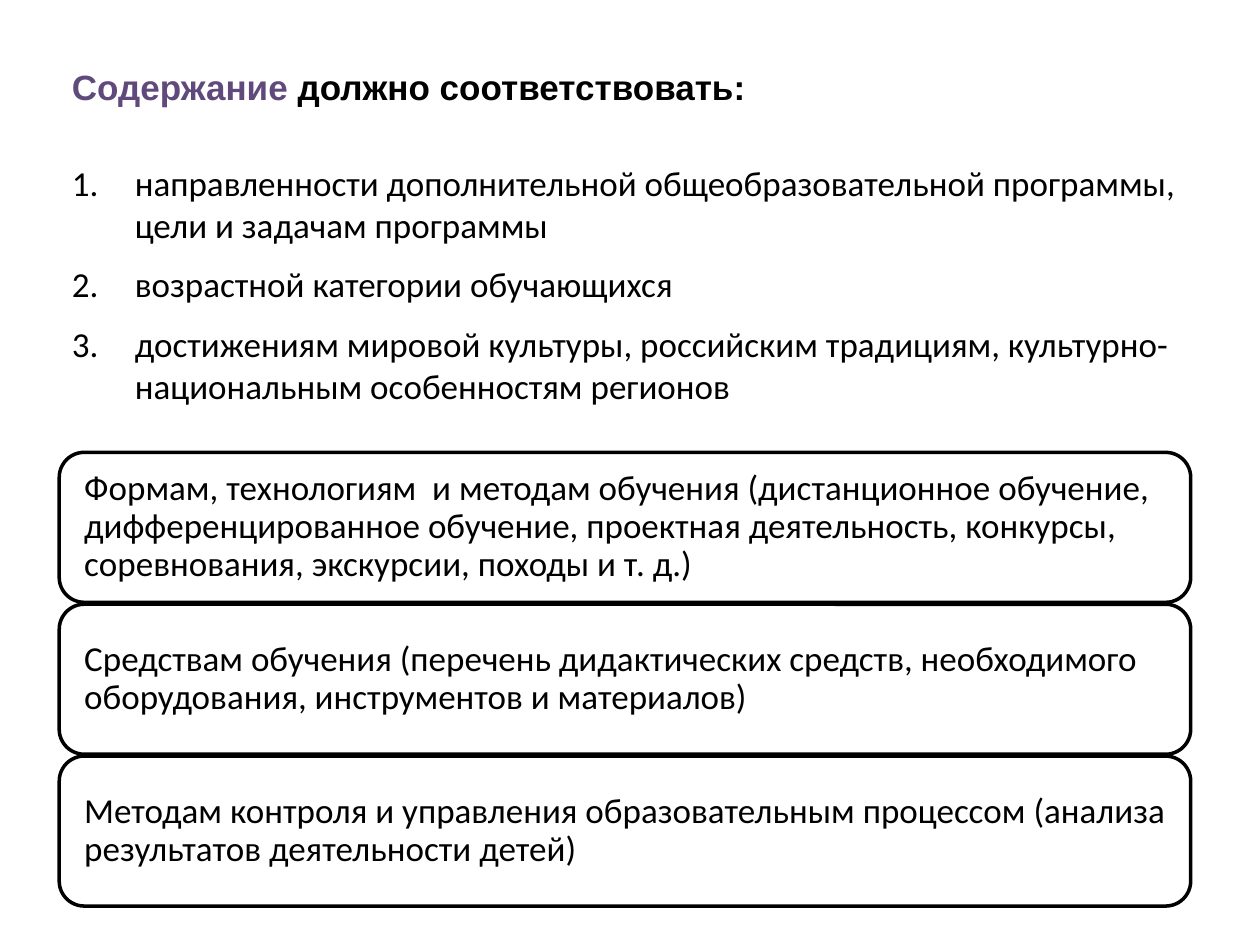
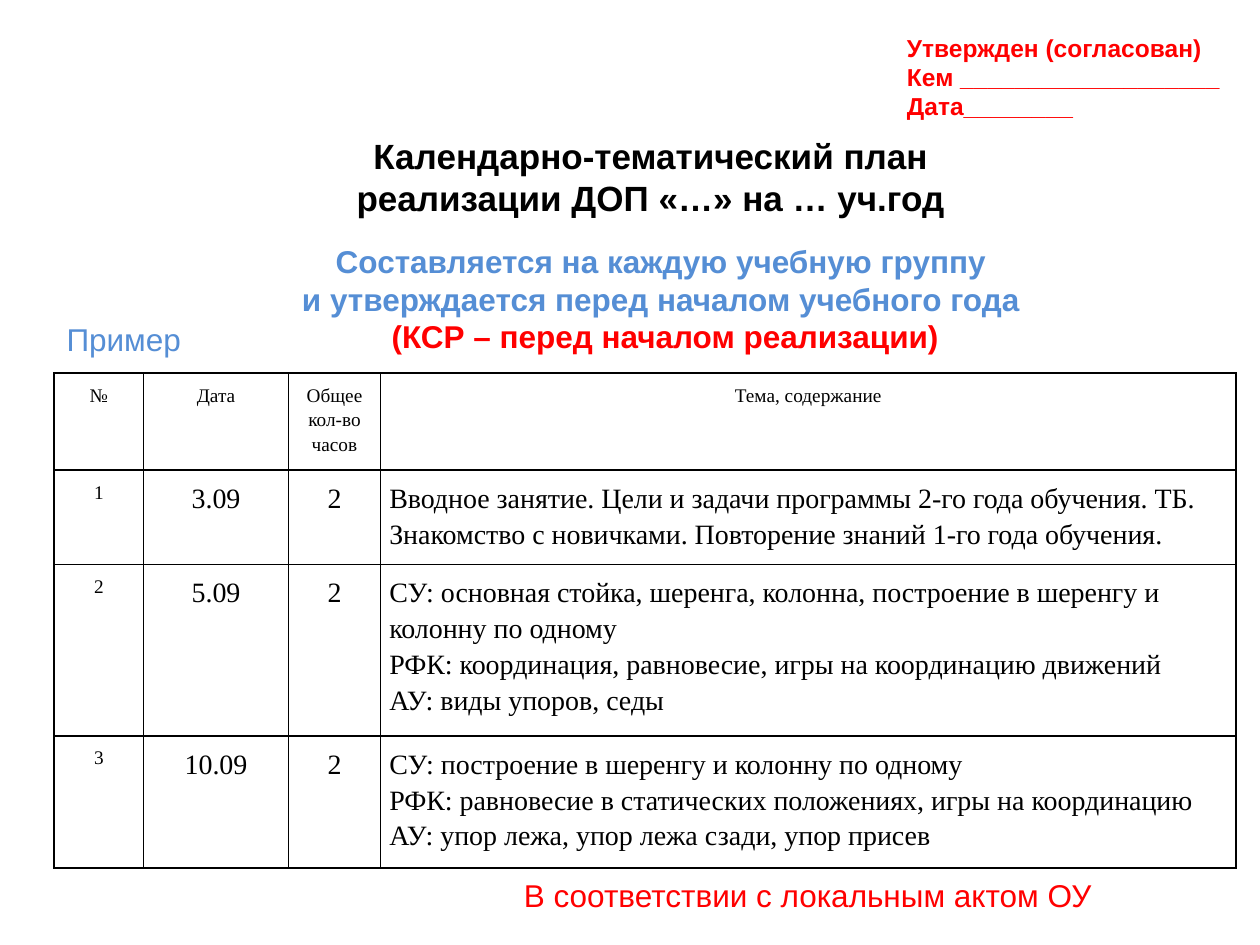
from dataclasses import dataclass

from lxml import etree
from pptx import Presentation
from pptx.dml.color import RGBColor
from pptx.enum.shapes import MSO_SHAPE
from pptx.enum.text import MSO_ANCHOR, MSO_AUTO_SIZE, PP_ALIGN
from pptx.oxml.ns import qn
from pptx.util import Emu, Inches, Pt

LEFT, CENTER = PP_ALIGN.LEFT, PP_ALIGN.CENTER
TOP, MIDDLE = MSO_ANCHOR.TOP, MSO_ANCHOR.MIDDLE
ROUNDED = MSO_SHAPE.ROUNDED_RECTANGLE
NO_AUTOFIT = MSO_AUTO_SIZE.NONE
TITLE_AND_BODY, TITLE_ONLY = 1, 5
WIDTH, HEIGHT = Inches(10), Inches(7.5)


@dataclass(frozen=True)
class Theme:
    black: str = "000000"
    white: str = "FFFFFF"
    purple: str = "604A7B"
    blue: str = "558ED5"
    red: str = "FF0000"
    head_font: str = "Arial"
    body_font: str = "Calibri"
    table_font: str = "Times New Roman"
    title: int = 20
    body: int = 20
    label: int = 18
    stamp: int = 14
    cell: int = 16
    small_cell: int = 11


T = Theme()

REQUIREMENTS = [
    "направленности дополнительной общеобразовательной программы, цели и задачам программы",
    "возрастной категории обучающихся",
    "достижениям мировой культуры, российским традициям, культурно-национальным "
    "особенностям регионов",
]
CARDS = [
    "Формам, технологиям  и методам обучения (дистанционное обучение, дифференцированное "
    "обучение, проектная деятельность, конкурсы, соревнования, экскурсии, походы и т. д.)",
    "Средствам обучения (перечень дидактических средств, необходимого оборудования, "
    "инструментов и материалов)",
    "Методам контроля и управления образовательным процессом (анализа результатов "
    "деятельности детей)",
]
PLAN_COLUMNS = [7.1, 11.5, 7.3, 67.9]
PLAN_ROWS = [10.27, 10, 18.13, 14]
PLAN = [
    ["№", "Дата", "Общее кол-во\nчасов", "Тема, содержание"],
    ["1", "3.09", "2",
     "Вводное занятие. Цели и задачи программы 2-го года обучения. ТБ. "
     "Знакомство с новичками. Повторение знаний 1-го года обучения."],
    ["2", "5.09", "2",
     "СУ: основная стойка, шеренга, колонна, построение в шеренгу и колонну по одному\n"
     "РФК: координация, равновесие, игры на координацию движений\n"
     "АУ: виды упоров, седы"],
    ["3", "10.09", "2",
     "СУ: построение в шеренгу и колонну по одному\n"
     "РФК: равновесие в статических положениях, игры на координацию\n"
     "АУ: упор лежа, упор лежа сзади, упор присев"],
]


def across(percent):
    return Emu(round(WIDTH * percent / 100))


def down(percent):
    return Emu(round(HEIGHT * percent / 100))


def box(x, y, w, h):
    """Turn percentages of the slide into left, top, width and height."""
    return across(x), down(y), across(w), down(h)


def rgb(color):
    return RGBColor.from_string(color)


def write(tf, paragraphs, size, font=T.head_font, color=T.black, bold=False,
          align=LEFT, anchor=TOP, spacing=1.0):
    """Write paragraphs, each a string or a list of (text, colour) runs."""
    tf.word_wrap = True
    tf.auto_size = NO_AUTOFIT
    tf.vertical_anchor = anchor
    for i, content in enumerate(paragraphs):
        p = tf.paragraphs[0] if i == 0 else tf.add_paragraph()
        p.alignment, p.line_spacing = align, spacing
        p.space_before = p.space_after = Pt(0)
        p.font.name, p.font.size, p.font.bold = font, Pt(size), bold
        p.font.color.rgb = rgb(color)
        if isinstance(content, str):
            p.text = content
        else:
            for text, run_color in content:
                r = p.add_run()
                r.text = text
                r.font.color.rgb = rgb(run_color)


def add_title(s, place, paragraphs, align=LEFT):
    sp = s.shapes.title
    sp.left, sp.top, sp.width, sp.height = place
    write(sp.text_frame, paragraphs, T.title, bold=True, align=align)


def add_label(s, place, paragraphs, size, **style):
    sp = s.shapes.add_textbox(*place)
    write(sp.text_frame, paragraphs, size, **style)


def add_numbered_list(s, place, items):
    sp = s.placeholders[1]
    sp.left, sp.top, sp.width, sp.height = place
    write(sp.text_frame, items, T.body, font=T.body_font)
    for p in sp.text_frame.paragraphs:
        p.space_after = Pt(10)
        pPr = p._p.get_or_add_pPr()
        pPr.set("marL", str(Inches(0.5)))
        pPr.set("indent", str(-Inches(0.5)))
        number = pPr.makeelement(qn("a:buAutoNum"), {"type": "arabicPeriod"})
        pPr.find(qn("a:defRPr")).addprevious(number)


def add_card(s, place, text):
    sp = s.shapes.add_shape(ROUNDED, *place)
    sp.shadow.inherit = False
    sp.fill.solid()
    sp.fill.fore_color.rgb = rgb(T.white)
    sp.line.color.rgb = rgb(T.black)
    sp.line.width = Pt(2)
    tf = sp.text_frame
    tf.margin_left = tf.margin_right = Inches(0.14)
    write(tf, [text], T.body, font=T.body_font, anchor=MIDDLE, spacing=0.9)


def format_cell(cell):
    cell.margin_left = cell.margin_right = Inches(0.07)
    cell.margin_top = cell.margin_bottom = Inches(0.07)
    tcPr = cell._tc.get_or_add_tcPr()
    for side in ("lnL", "lnR", "lnT", "lnB"):
        ln = etree.SubElement(tcPr, qn(f"a:{side}"), w=str(Pt(1)))
        fill = etree.SubElement(ln, qn("a:solidFill"))
        etree.SubElement(fill, qn("a:srgbClr"), val=T.black)
    cell.fill.solid()
    cell.fill.fore_color.rgb = rgb(T.white)


def add_plan_table(s, x, y):
    place = box(x, y, sum(PLAN_COLUMNS), sum(PLAN_ROWS))
    table = s.shapes.add_table(len(PLAN), len(PLAN_COLUMNS), *place).table
    table.first_row = table.horz_banding = False
    for column, width in zip(table.columns, PLAN_COLUMNS):
        column.width = across(width)
    for row, height in zip(table.rows, PLAN_ROWS):
        row.height = down(height)
    for i, texts in enumerate(PLAN):
        for j, text in enumerate(texts):
            cell = table.cell(i, j)
            format_cell(cell)
            is_topic = i > 0 and j == len(texts) - 1
            size = T.small_cell if i == 0 or j == 0 else T.cell
            write(cell.text_frame, text.split("\n"), size, font=T.table_font,
                  align=LEFT if is_topic else CENTER, spacing=1.15)


def build_content_slide(prs):
    s = prs.slides.add_slide(prs.slide_layouts[TITLE_AND_BODY])
    add_title(s, box(4.7, 6.27, 70.3, 5.87),
              [[("Содержание", T.purple), (" должно соответствовать:", T.black)]])
    add_numbered_list(s, box(4.7, 16.4, 90.6, 27.33), REQUIREMENTS)
    top, height, gap = 47.87, 15.87, 0.2
    for i, text in enumerate(CARDS):
        add_card(s, box(4.7, top + i * (height + gap), 89.8, height), text)


def build_plan_slide(prs):
    s = prs.slides.add_slide(prs.slide_layouts[TITLE_ONLY])
    add_label(s, box(71, 2.8, 29, 10.8),
              ["Утвержден (согласован)", "Кем ___________________", "Дата________"],
              T.stamp, color=T.red, bold=True)
    add_title(s, box(5.6, 13.6, 92.1, 10.27),
              ["Календарно-тематический план", "реализации ДОП «…» на … уч.год"], CENTER)
    add_label(s, box(5.6, 24.93, 94.4, 13.47),
              ["Составляется на каждую учебную группу \v"
               "и утверждается перед началом учебного года ",
               [("(КСР – перед началом реализации)", T.red)]],
              T.label, color=T.blue, bold=True, align=CENTER)
    add_label(s, box(4.3, 33.2, 29.7, 5.33), ["Пример"], T.label, color=T.blue)
    add_plan_table(s, 4.3, 39.47)
    add_label(s, box(40.6, 92, 59.4, 5.33), ["В соответствии с локальным актом ОУ"],
              T.label, color=T.red)


def main():
    prs = Presentation()
    prs.slide_width, prs.slide_height = WIDTH, HEIGHT
    build_content_slide(prs)
    build_plan_slide(prs)
    prs.save("out.pptx")


if __name__ == "__main__":
    main()
